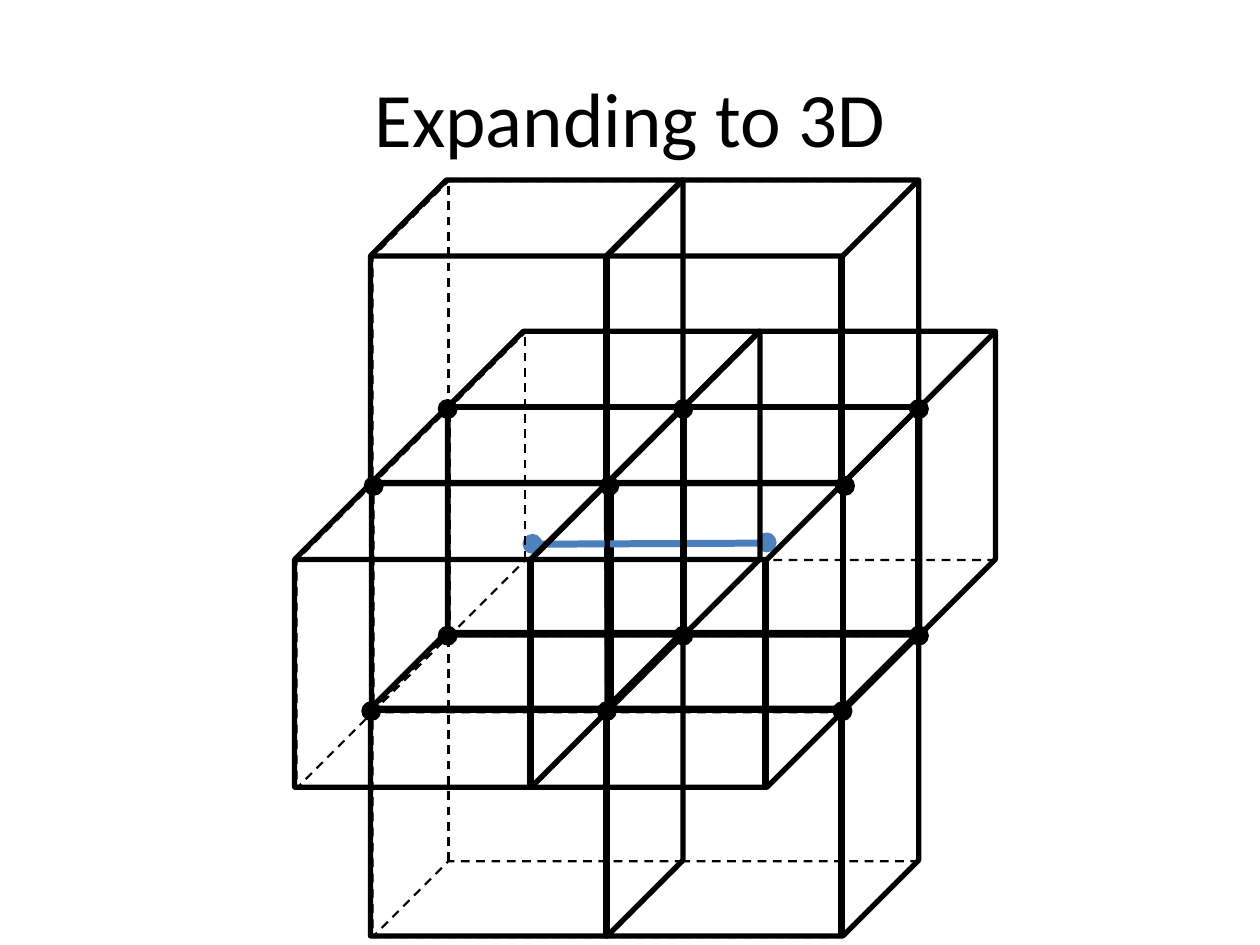
import pptx
import pptx.util
import pptx.dml.color
import pptx.enum.dml
import pptx.enum.shapes
import pptx.enum.text
import pptx.oxml.ns
import lxml.etree

Cm = pptx.util.Cm
Pt = pptx.util.Pt
SHAPE = pptx.enum.shapes.MSO_SHAPE
DASH = pptx.enum.dml.MSO_LINE.DASH
BLACK = pptx.dml.color.RGBColor(0x00, 0x00, 0x00)
BLUE = pptx.dml.color.RGBColor(0x4F, 0x81, 0xBD)
LINK_BLUE = pptx.dml.color.RGBColor(0x4B, 0x7E, 0xBC)

TITLE = "Expanding to 3D"
TITLE_FONT = {"name": "Calibri", "size": Pt(44)}
TITLE_BOX = {"left": Cm(1.27), "top": Cm(0.76), "width": Cm(22.86), "height": Cm(3.18)}
TITLE_FRAME = {"vertical_anchor": pptx.enum.text.MSO_ANCHOR.MIDDLE, "word_wrap": True}

COLUMN_STEP = 4.75
CUBE_WIDTH, CUBE_HEIGHT, CUBE_DEPTH = 6.3, 6.12, 1.53
HIDDEN_WIDTH, HIDDEN_SHIFT = 6.27, (0.04, 0.02)
DOT_SIZE = 0.33

CENTER_CELL = (7.49, 8.2)
NEIGHBOR_CELLS = [(5.94, 9.75), (9.02, 6.68), (7.47, 3.63), (7.47, 12.75)]
CORNER_ROWS = [(7.32, 14.17), (7.37, 9.63), (8.86, 12.65), (8.86, 8.08)]
PRESSURE_DOTS = [(10.57, 10.8), (15.29, 10.77)]
PRESSURE_LINK = ((10.87, 10.97), (15.29, 10.95))
CENTER_EDGES = [((12.24, 9.75), (12.27, 14.3), 4), ((12.29, 9.93), (12.29, 14.27), 5)]


def format_line(line, color, width, dash=None):
    line.color.rgb = color
    for attribute, value in {"width": Pt(width), "dash_style": dash}.items():
        setattr(line, attribute, value)


def add_edge(shapes, start, end, width, color=BLACK):
    edge = shapes.add_connector(
        pptx.enum.shapes.MSO_CONNECTOR.STRAIGHT, *map(Cm, start + end))
    format_line(edge.line, color, width)
    lxml.etree.SubElement(edge._element.spPr, pptx.oxml.ns.qn("a:effectLst"))


def add_cube(shapes, left, top):
    dx, dy = HIDDEN_SHIFT
    outlines = [
        (left, top, CUBE_WIDTH, 0, 3, None),
        (left + dx, top + dy, HIDDEN_WIDTH, 180, 1.25, DASH),
    ]
    for x, y, width, rotation, weight, dash in outlines:
        cube = shapes.add_shape(SHAPE.CUBE, Cm(x), Cm(y), Cm(width), Cm(CUBE_HEIGHT))
        cube.rotation = rotation
        cube.shadow.inherit = False
        cube.fill.background()
        format_line(cube.line, BLACK, weight, dash)


def add_dot(shapes, left, top, color):
    dot = shapes.add_shape(SHAPE.OVAL, Cm(left), Cm(top), Cm(DOT_SIZE), Cm(DOT_SIZE))
    dot.shadow.inherit = False
    dot.fill.solid()
    dot.fill.fore_color.rgb = color
    format_line(dot.line, color, 2)


def add_neighbor(shapes, left, top):
    cell = shapes.add_group_shape().shapes
    add_cube(cell, left, top)
    edge_x = left + COLUMN_STEP
    add_edge(cell, (edge_x, top + CUBE_DEPTH), (edge_x, top + CUBE_HEIGHT), 4)


def main():
    deck = pptx.Presentation()
    deck.slide_width, deck.slide_height = Cm(25.4), Cm(19.05)
    slide = deck.slides.add_slide(deck.slide_layouts[5])
    shapes = slide.shapes

    title = shapes.title
    title.text_frame.text = TITLE
    heading = title.text_frame.paragraphs[0]
    heading.alignment = pptx.enum.text.PP_ALIGN.CENTER
    font = heading.runs[0].font
    font.color.rgb = BLACK
    for target, values in (
            (title, TITLE_BOX), (title.text_frame, TITLE_FRAME), (font, TITLE_FONT)):
        for attribute, value in values.items():
            setattr(target, attribute, value)

    center_left, center_top = CENTER_CELL
    for column in range(2):
        add_cube(shapes, center_left + column * COLUMN_STEP, center_top)
    for start, end, width in CENTER_EDGES:
        add_edge(shapes, start, end, width)

    for row_left, row_top in CORNER_ROWS:
        for column in range(3):
            add_dot(shapes, row_left + column * COLUMN_STEP, row_top, BLACK)

    for left, top in PRESSURE_DOTS:
        add_dot(shapes, left, top, BLUE)
    add_edge(shapes, *PRESSURE_LINK, 4, LINK_BLUE)

    for left, top in NEIGHBOR_CELLS:
        for column in range(2):
            add_neighbor(shapes, left + column * COLUMN_STEP, top)

    deck.save("out.pptx")


if __name__ == "__main__":
    main()
